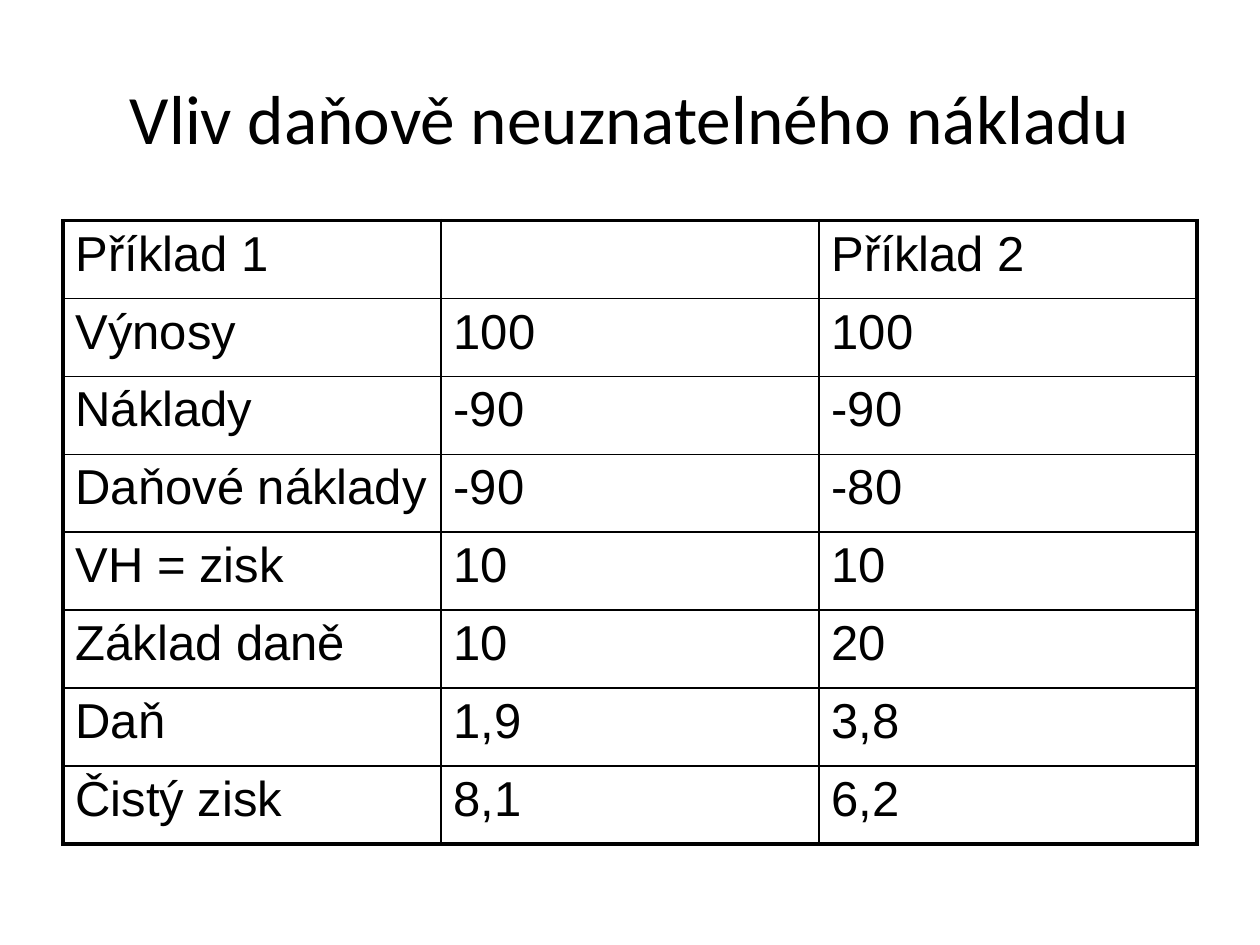
from lxml import etree
from pptx import Presentation
from pptx import util as u
from pptx.dml.color import RGBColor
from pptx.enum import text
from pptx.oxml.ns import qn


def rgb(color):
    return RGBColor.from_string(color)


class Deck:
    INK = "000000"
    TITLE_FONT, TABLE_FONT = "Calibri", "Arial"
    THIN, THICK = 1, 2.25

    def __init__(self, width, height):
        self.prs = Presentation()
        self.prs.slide_width, self.prs.slide_height = u.Inches(width), u.Inches(height)
        self.s = self.prs.slides.add_slide(self.prs.slide_layouts[5])

    def style(self, p, font, size):
        for r in p.runs:
            r.font.name, r.font.size = font, u.Pt(size)
            r.font.color.rgb = rgb(self.INK)

    def title(self, words, left, top, width, height):
        sp = self.s.shapes.title
        sp.left, sp.top, sp.width, sp.height = map(u.Inches, (left, top, width, height))
        tf = sp.text_frame
        tf.text = words
        tf.vertical_anchor = text.MSO_ANCHOR.MIDDLE
        p = tf.paragraphs[0]
        p.alignment = text.PP_ALIGN.CENTER
        self.style(p, self.TITLE_FONT, 39.6)

    def border(self, cell, side, width):
        ln = etree.SubElement(cell._tc.get_or_add_tcPr(), qn("a:ln" + side), w=str(u.Pt(width)))
        fill = etree.SubElement(ln, qn("a:solidFill"))
        etree.SubElement(fill, qn("a:srgbClr"), val=self.INK)

    def cell(self, cell, words, outer):
        # Borders come before the fill in the cell properties
        for side in "LRTB":
            self.border(cell, side, self.THICK if side in outer else self.THIN)
        cell.fill.background()
        cell.text = words
        p = cell.text_frame.paragraphs[0]
        before = etree.SubElement(p._p.get_or_add_pPr(), qn("a:spcBef"))
        etree.SubElement(before, qn("a:spcPct"), val="20000")
        self.style(p, self.TABLE_FONT, 28)

    def table(self, rows, left, top, width, height):
        n_rows, n_cols = len(rows), len(rows[0])
        box = map(u.Inches, (left, top, width, height))
        tbl = self.s.shapes.add_table(n_rows, n_cols, *box).table
        tbl.first_row = tbl.horz_banding = False
        for i, row in enumerate(rows):
            for j, words in enumerate(row):
                edges = {"L": j == 0, "R": j == n_cols - 1, "T": i == 0, "B": i == n_rows - 1}
                outer = [side for side, on_edge in edges.items() if on_edge]
                self.cell(tbl.cell(i, j), words, outer)


def main():
    deck = Deck(10, 7.5)

    # Heading
    deck.title("Vliv daňově neuznatelného nákladu", 0.5, 0.3, 9, 1.25)

    # Comparison of the two examples
    deck.table([
        ("Příklad 1", "", "Příklad 2"),
        ("Výnosy", "100", "100"),
        ("Náklady", "-90", "-90"),
        ("Daňové náklady", "-90", "-80"),
        ("VH = zisk", "10", "10"),
        ("Základ daně", "10", "20"),
        ("Daň", "1,9", "3,8"),
        ("Čistý zisk", "8,1", "6,2"),
    ], 0.5, 1.75, 9, 4.95)

    deck.prs.save("out.pptx")


if __name__ == "__main__":
    main()
